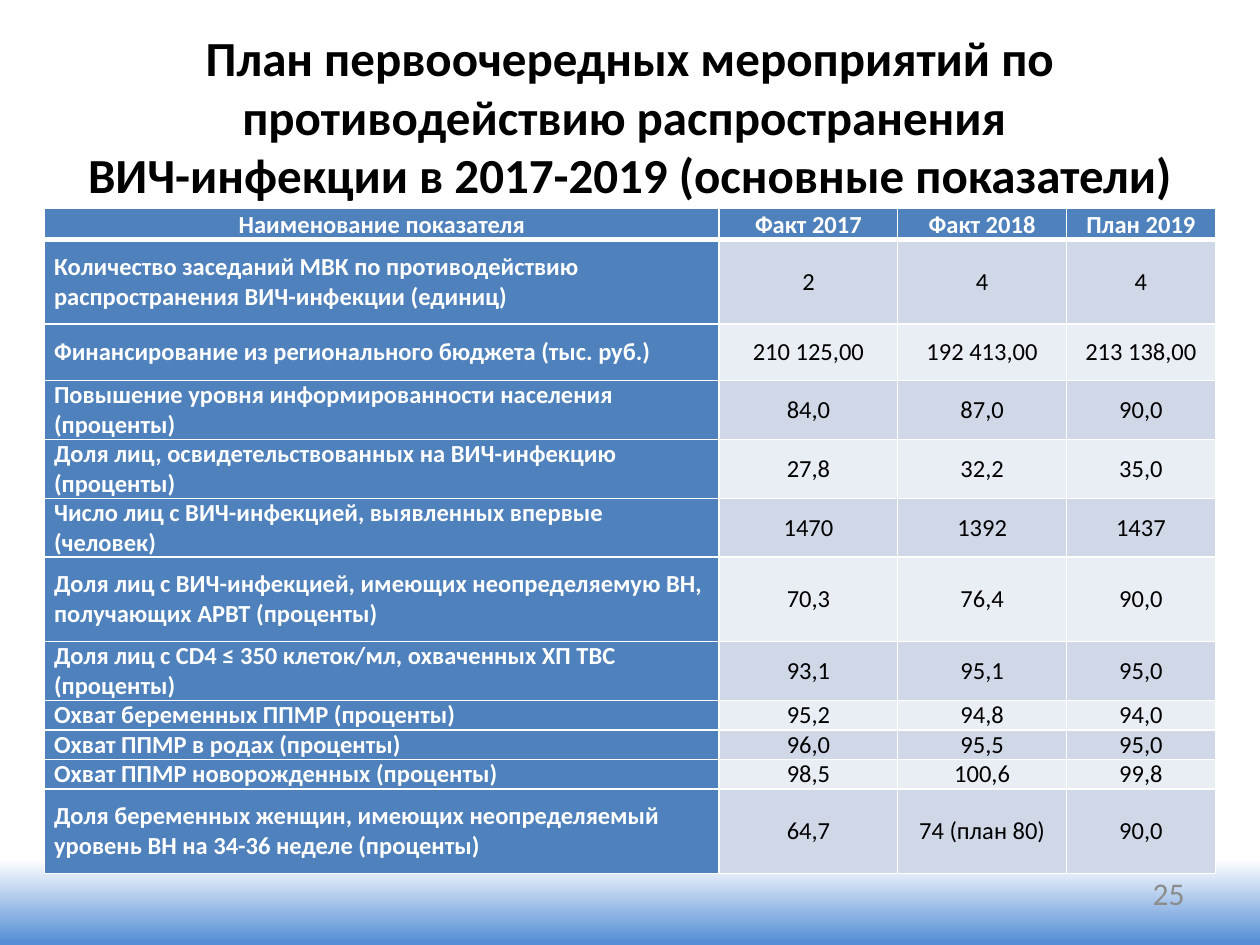
from pptx import Presentation
from pptx.dml.color import RGBColor
from pptx.enum.shapes import MSO_SHAPE
from pptx.enum.text import MSO_ANCHOR, MSO_AUTO_SIZE, PP_ALIGN
from pptx.oxml import parse_xml
from pptx.oxml.ns import nsdecls
from pptx.util import Pt

# Content
TITLE = ("План первоочередных мероприятий по противодействию распространения \v"
         "ВИЧ-инфекции в 2017-2019 (основные показатели)")
PAGE = "25"
HEADER = ("Наименование показателя", "Факт 2017", "Факт 2018", "План 2019")
ROWS = [
    ("Количество заседаний МВК по противодействию распространения ВИЧ-инфекции (единиц)",
     "2", "4", "4"),
    ("Финансирование из регионального бюджета (тыс. руб.)",
     "210 125,00", "192 413,00", "213 138,00"),
    ("Повышение уровня информированности населения (проценты)", "84,0", "87,0", "90,0"),
    ("Доля лиц, освидетельствованных на ВИЧ-инфекцию (проценты)", "27,8", "32,2", "35,0"),
    ("Число лиц с ВИЧ-инфекцией, выявленных впервые (человек)", "1470", "1392", "1437"),
    ("Доля лиц с ВИЧ-инфекцией, имеющих неопределяемую ВН, получающих АРВТ (проценты)",
     "70,3", "76,4", "90,0"),
    ("Доля лиц с CD4 ≤ 350 клеток/мл, охваченных ХП ТВС (проценты)", "93,1", "95,1", "95,0"),
    ("Охват беременных ППМР (проценты)", "95,2", "94,8", "94,0"),
    ("Охват ППМР в родах (проценты)", "96,0", "95,5", "95,0"),
    ("Охват ППМР новорожденных (проценты)", "98,5", "100,6", "99,8"),
    ("Доля беременных женщин, имеющих неопределяемый уровень ВН на 34-36 неделе (проценты)",
     "64,7", "74 (план 80)", "90,0"),
]

# Style, lengths in points
FONT = "Calibri"
BLACK = RGBColor(0x00, 0x00, 0x00)
WHITE = RGBColor(0xFF, 0xFF, 0xFF)
GRAY = RGBColor(0x8C, 0x8C, 0x8C)
BLUE = RGBColor(0x4F, 0x81, 0xBD)
BAND_BLUE = RGBColor(0x55, 0x8E, 0xD5)
STRIPES = (RGBColor(0xD0, 0xD8, 0xE8), RGBColor(0xE9, 0xED, 0xF4))
COL_WIDTHS = (385.5, 102, 96.5, 85)
LINE = 16.1  # height of one table line
ROW_LINES = (1, 3, 2, 2, 2, 2, 3, 2, 1, 1, 1, 3)


def style(p, size, color, bold=False, align=PP_ALIGN.LEFT):
    p.alignment = align
    for r in p.runs:
        r.font.name, r.font.size, r.font.bold = FONT, Pt(size), bold
        r.font.color.rgb = color


def set_borders(cell, **widths):
    tc_pr = cell._tc.get_or_add_tcPr()
    for side in "LRTB":
        tc_pr.append(parse_xml(
            f'<a:ln{side} {nsdecls("a")} w="{Pt(widths.get(side, 1))}">'
            f'<a:solidFill><a:srgbClr val="{WHITE}"/></a:solidFill></a:ln{side}>'))


def fill_cell(cell, text, row, col):
    is_header, is_label = row == 0, col == 0
    is_strong = is_header or is_label
    set_borders(cell, T=3 if row == 1 else 1, B=3 if is_header else 1)
    cell.fill.solid()
    cell.fill.fore_color.rgb = BLUE if is_strong else STRIPES[(row - 1) % 2]
    cell.margin_left = cell.margin_right = Pt(5.4)
    cell.margin_top = cell.margin_bottom = 0
    cell.vertical_anchor = MSO_ANCHOR.TOP if is_header else MSO_ANCHOR.MIDDLE
    p = cell.text_frame.paragraphs[0]
    p.text = text
    style(p, 14, WHITE if is_strong else BLACK, is_strong,
          PP_ALIGN.LEFT if is_label and not is_header else PP_ALIGN.CENTER)
    if is_header:
        p.line_spacing = 1.07


prs = Presentation()
prs.slide_width, prs.slide_height = Pt(720), Pt(540)
s = prs.slides.add_slide(prs.slide_layouts[5])

# Title
title = s.shapes.title
title.left, title.top, title.width, title.height = Pt(31), Pt(21), Pt(657.5), Pt(90)
tf = title.text_frame
tf.text = TITLE
tf.word_wrap = True
tf.auto_size = MSO_AUTO_SIZE.NONE
tf.vertical_anchor = MSO_ANCHOR.MIDDLE
style(tf.paragraphs[0], 28, BLACK, True, PP_ALIGN.CENTER)

# Gradient band at the foot
band = s.shapes.add_shape(MSO_SHAPE.ROUNDED_RECTANGLE, 0, Pt(491), Pt(720), Pt(49))
band.adjustments[0] = 0
band.shadow.inherit = False
band.line.fill.background()
band.fill.gradient()
band.fill.gradient_angle = 90
for stop, (position, color) in zip(band.fill.gradient_stops, ((0.03, BAND_BLUE), (1, WHITE))):
    stop.position = position
    stop.color.rgb = color

# Page number
box = s.shapes.add_textbox(Pt(643.5), Pt(491), Pt(40.5), Pt(38))
tf = box.text_frame
tf.text = PAGE
tf.word_wrap = True
tf.vertical_anchor = MSO_ANCHOR.MIDDLE
style(tf.paragraphs[0], 18, GRAY, align=PP_ALIGN.RIGHT)

# Table of indicators
table = s.shapes.add_table(len(ROWS) + 1, len(HEADER), Pt(25.5), Pt(119),
                           Pt(sum(COL_WIDTHS)), Pt(LINE * sum(ROW_LINES))).table
for column, width in zip(table.columns, COL_WIDTHS):
    column.width = Pt(width)
for row, lines in zip(table.rows, ROW_LINES):
    row.height = Pt(lines * LINE)
for i, values in enumerate([HEADER] + ROWS):
    for j, value in enumerate(values):
        fill_cell(table.cell(i, j), value, i, j)

prs.save("out.pptx")
